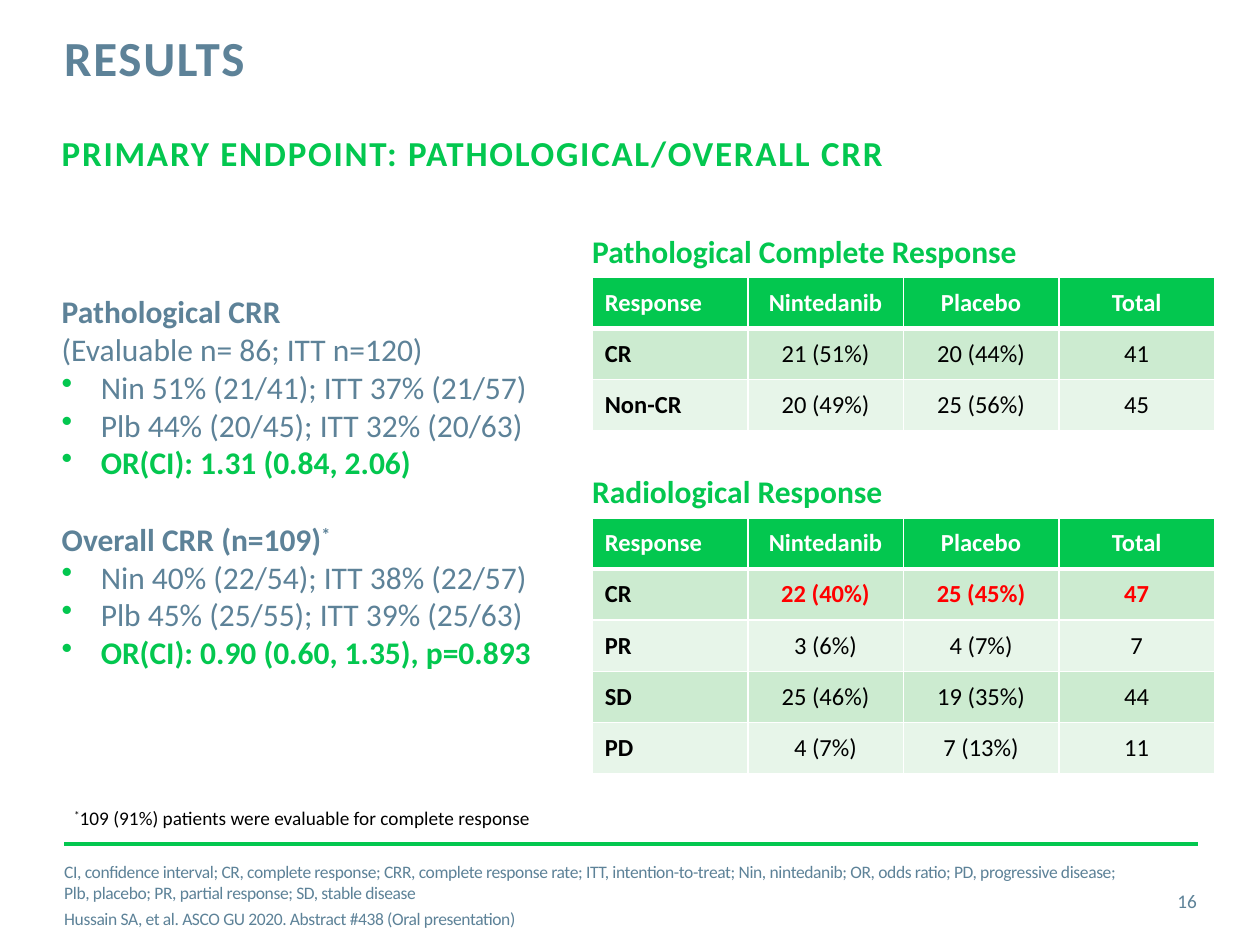
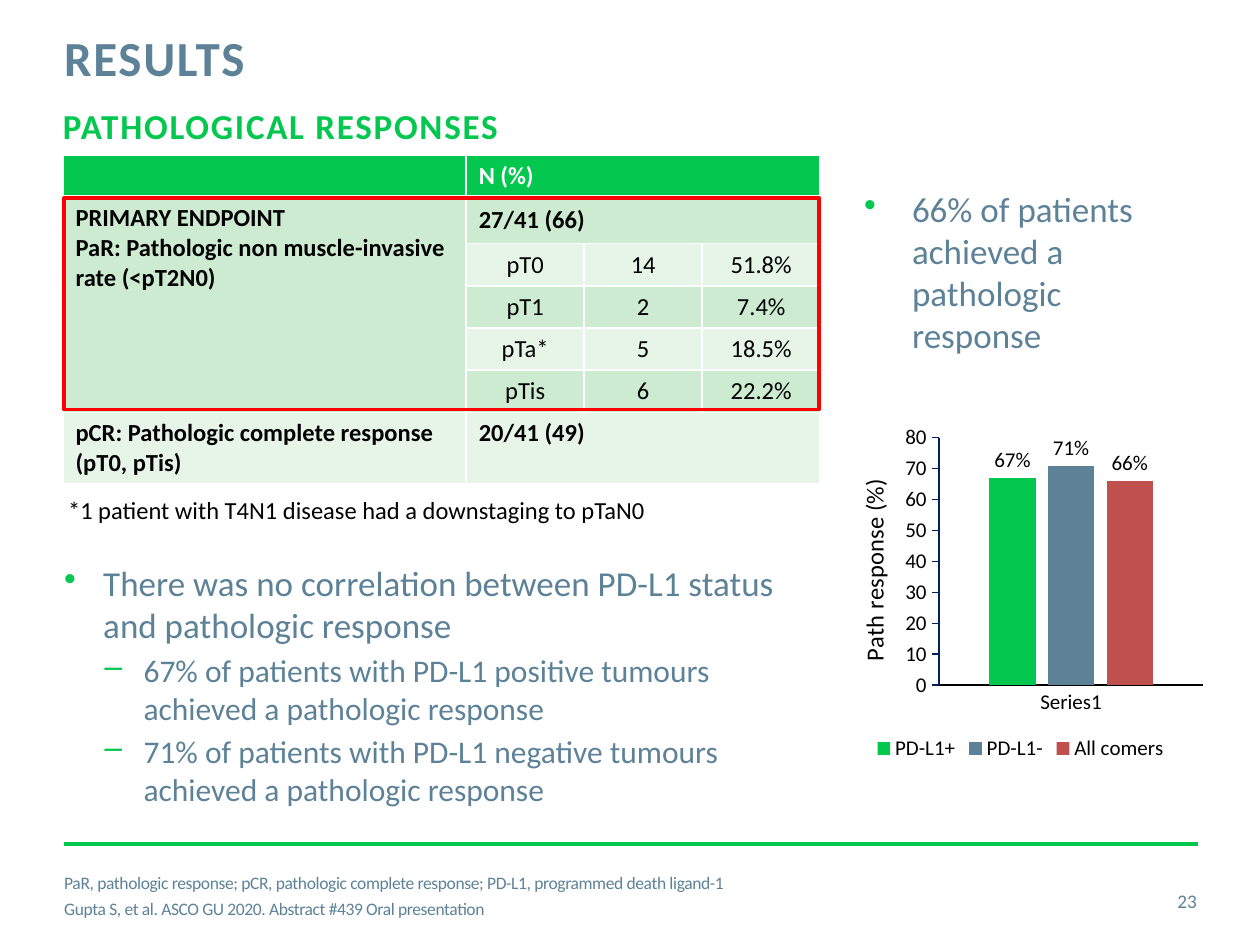
from dataclasses import dataclass
from typing import NamedTuple

from lxml.etree import SubElement
from pptx import Presentation
from pptx.chart.data import CategoryChartData
from pptx.dml.color import RGBColor
from pptx.enum.chart import XL_CHART_TYPE as ChartType
from pptx.enum.chart import XL_LABEL_POSITION as LabelPosition
from pptx.enum.chart import XL_LEGEND_POSITION as LegendPosition
from pptx.enum.chart import XL_TICK_MARK as TickMark
from pptx.enum.shapes import MSO_CONNECTOR as Connector
from pptx.enum.shapes import MSO_SHAPE as Shape
from pptx.enum.text import MSO_ANCHOR as Anchor
from pptx.enum.text import PP_ALIGN as Align
from pptx.oxml.ns import qn
from pptx.util import Inches, Pt


@dataclass(frozen=True)
class Theme:
    """Colours and type sizes of the deck."""
    font: str = "Calibri"
    green: str = "03C74F"
    slate: str = "5D8298"
    brick: str = "C0504D"
    navy: str = "002060"
    red: str = "FF0000"
    black: str = "000000"
    white: str = "FFFFFF"
    band_dark: str = "CCEBD0"
    band_light: str = "E7F5E9"
    title: int = 28
    heading: int = 20
    body: int = 18
    table: int = 14
    chart: int = 12
    small: int = 11
    footer: int = 10


THEME = Theme()


class Box(NamedTuple):
    """A region in inches."""
    left: float
    top: float
    width: float
    height: float

    def emu(self):
        """Return the region as lengths."""
        return [Inches(value) for value in self]


@dataclass(frozen=True)
class Span:
    """A stretch of text in one style."""
    text: str
    size: float = THEME.body
    color: str = THEME.slate
    bold: bool = False
    spacing: float = 0
    raised: bool = False


@dataclass(frozen=True)
class Line:
    """A paragraph with its spans and layout."""
    spans: tuple
    bullet: str = ""
    left: float = 0.31
    hang: float = 0.31
    before: float = 0
    align: Align = Align.LEFT
    exact: float = 0


def style_font(font, size, color, bold=False):
    """Set family, size, colour and weight."""
    font.name, font.size, font.bold = THEME.font, Pt(size), bold
    font.color.rgb = RGBColor.from_string(color)


def add_span(para, span):
    """Add a span run by run, with a break at each newline."""
    for index, text in enumerate(span.text.split("\n")):
        if index:
            para.add_line_break()
        run = para.add_run()
        run.text = text
        style_font(run.font, span.size, span.color, span.bold)
        props = run._r.get_or_add_rPr()
        if span.spacing:
            props.set("spc", str(round(span.spacing * 100)))
        if span.raised:
            props.set("baseline", "30000")


def add_bullet(para, line):
    """Give the paragraph a hanging green bullet."""
    props = para._p.get_or_add_pPr()
    props.set("marL", str(Inches(line.left)))
    props.set("indent", str(-Inches(line.hang)))
    color = SubElement(props, qn("a:buClr"))
    SubElement(color, qn("a:srgbClr"), val=THEME.green)
    SubElement(props, qn("a:buChar"), char=line.bullet)


def fill_frame(frame, lines):
    """Write the lines into a text frame."""
    for index, line in enumerate(lines):
        para = frame.add_paragraph() if index else frame.paragraphs[0]
        para.alignment = line.align
        if line.before:
            para.space_before = Pt(line.before)
        if line.exact:
            para.line_spacing = Pt(line.exact)
        if line.bullet:
            add_bullet(para, line)
        for span in line.spans:
            add_span(para, span)


def add_text(page, box, lines, anchor=Anchor.TOP, insets=(0, 0, 0, 0)):
    """Place a wrapped text box."""
    frame = page.shapes.add_textbox(*box.emu()).text_frame
    frame.word_wrap = True
    frame.vertical_anchor = anchor
    (frame.margin_left, frame.margin_top,
     frame.margin_right, frame.margin_bottom) = [Inches(inset) for inset in insets]
    fill_frame(frame, lines)


def add_frame(page, heading, heading_box, notes, number):
    """Place the title, heading, rule, footer notes and page number."""
    rule = page.shapes.add_connector(
        Connector.STRAIGHT, Inches(0.51), Inches(6.7), Inches(9.51), Inches(6.7))
    rule.line.color.rgb = RGBColor.from_string(THEME.green)
    rule.line.width = Pt(2)
    SubElement(rule._element.spPr, qn("a:effectLst"))
    title = Span("RESULTS", THEME.title, bold=True, spacing=1)
    add_text(page, Box(0.51, 0.27, 7.17, 0.88), [Line((title,), exact=30)])
    span = Span(heading, THEME.heading, THEME.green, True, 1)
    add_text(page, heading_box, [Line((span,))])
    footer = [Line((Span(note, THEME.footer, spacing=-0.2),), before=3 if index else 0)
              for index, note in enumerate(notes)]
    add_text(page, Box(0.51, 6.8, 8.35, 0.61), footer, Anchor.MIDDLE)
    label = Span(str(number), THEME.small)
    add_text(page, Box(8.86, 6.95, 0.64, 0.4),
             [Line((label,), align=Align.RIGHT)], Anchor.MIDDLE)


def style_cell(cell, fill, top=1, bottom=1):
    """Set white borders, then the fill, of a table cell."""
    props = cell._tc.get_or_add_tcPr()
    for side, width in (("L", 1), ("R", 1), ("T", top), ("B", bottom)):
        edge = SubElement(props, qn(f"a:ln{side}"), w=str(Pt(width)))
        paint = SubElement(edge, qn("a:solidFill"))
        SubElement(paint, qn("a:srgbClr"), val=THEME.white)
    cell.fill.solid()
    cell.fill.fore_color.rgb = RGBColor.from_string(fill)
    cell.vertical_anchor = Anchor.MIDDLE
    end = cell.text_frame.paragraphs[0]._p.get_or_add_endParaRPr()
    end.set("sz", str(THEME.table * 100))


def add_grid(page, box, widths, heights):
    """Add a banded table with a green header and return it."""
    table = page.shapes.add_table(len(heights), len(widths), *box.emu()).table
    for column, width in zip(table.columns, widths):
        column.width = Inches(width)
    for index, (row, height) in enumerate(zip(table.rows, heights)):
        row.height = Inches(height)
        band = THEME.band_dark if index % 2 else THEME.band_light
        for cell in row.cells:
            style_cell(cell, band if index else THEME.green,
                       top=3 if index == 1 else 1, bottom=1 if index else 3)
    return table


def write_cell(cell, text, color=THEME.black, bold=False, align=Align.LEFT):
    """Write one styled line in a table cell."""
    fill_frame(cell.text_frame,
               [Line((Span(text, THEME.table, color, bold),), align=align)])


def add_response_table(page, box, caption, rows, red_row=None):
    """Place a caption and its table of responses by arm."""
    span = Span(caption, THEME.body, THEME.green, True)
    add_text(page, Box(box.left, box.top - 0.41, 4.64, 0.4),
             [Line((span,))], insets=(0, 0.05, 0.1, 0.05))
    rows = [("Response", "Nintedanib", "Placebo", "Total"), *rows]
    table = add_grid(page, box, [box.width / 4] * 4, [box.height / len(rows)] * len(rows))
    for i, row in enumerate(rows):
        for j, text in enumerate(row):
            red = i == red_row and j > 0
            color = THEME.red if red else THEME.black if i else THEME.white
            write_cell(table.cell(i, j), text, color, i == 0 or j == 0 or red,
                       Align.CENTER if j else Align.LEFT)


def add_pathology_table(page, box):
    """Place the table of pathological responses with its red outline."""
    heights = [0.32, 0.37, *[0.335] * 4, 0.57]
    table = add_grid(page, box, [3.2] + [(box.width - 3.2) / 3] * 3, heights)
    for row in (0, 1, 6):
        table.cell(row, 1).merge(table.cell(row, 3))
    table.cell(1, 0).merge(table.cell(5, 0))
    write_cell(table.cell(0, 1), "N (%)", THEME.white, True)
    bold_cells = {
        (1, 0): "PRIMARY ENDPOINT\nPaR: Pathologic non muscle-invasive rate (<pT2N0)",
        (1, 1): "27/41 (66)",
        (6, 0): "pCR: Pathologic complete response (pT0, pTis)",
        (6, 1): "20/41 (49)",
    }
    for place, text in bold_cells.items():
        write_cell(table.cell(*place), text, bold=True)
    for place in ((1, 0), (6, 1)):
        table.cell(*place).vertical_anchor = Anchor.TOP
    stages = [("pT0", "14", "51.8%"), ("pT1", "2", "7.4%"),
              ("pTa*", "5", "18.5%"), ("pTis", "6", "22.2%")]
    for i, stage in enumerate(stages, 2):
        for j, text in enumerate(stage, 1):
            write_cell(table.cell(i, j), text, align=Align.CENTER)
    outline_box = Box(box.left + 0.01, box.top + 0.34, box.width - 0.02, 1.68)
    outline = page.shapes.add_shape(Shape.RECTANGLE, *outline_box.emu())
    outline.shadow.inherit = False
    outline.fill.background()
    outline.line.color.rgb = RGBColor.from_string(THEME.red)
    outline.line.width = Pt(2)


def style_axis(axis, color, tick):
    """Set the line, ticks and labels of a chart axis."""
    axis.has_major_gridlines = False
    axis.major_tick_mark, axis.minor_tick_mark = tick, TickMark.NONE
    axis.format.line.color.rgb = RGBColor.from_string(color)
    axis.format.line.width = Pt(0.75)
    style_font(axis.tick_labels.font, THEME.chart, THEME.black)


def add_response_chart(page, box):
    """Place the column chart of response by PD-L1 status."""
    data = CategoryChartData()
    data.categories = ["Series1"]
    for name, value in (("PD-L1+", 67), ("PD-L1-", 71), ("All comers", 66)):
        data.add_series(name, [value])
    chart = page.shapes.add_chart(ChartType.COLUMN_CLUSTERED, *box.emu(), data).chart
    style_font(chart.font, THEME.footer, THEME.black)
    chart.has_title = False
    chart.has_legend = True
    chart.legend.position = LegendPosition.BOTTOM
    chart.legend.include_in_layout = False
    style_font(chart.legend.font, THEME.chart, THEME.black)
    style_axis(chart.category_axis, THEME.black, TickMark.NONE)
    scale = chart.value_axis
    style_axis(scale, THEME.navy, TickMark.OUTSIDE)
    scale.minimum_scale, scale.maximum_scale, scale.major_unit = 0, 80, 10
    title = Span("Path response (%)", THEME.table, THEME.black)
    fill_frame(scale.axis_title.text_frame, [Line((title,))])
    plot = chart.plots[0]
    plot.gap_width, plot.overlap, plot.vary_by_categories = 219, -27, False
    for series, color in zip(plot.series, (THEME.green, THEME.slate, THEME.brick)):
        series.format.fill.solid()
        series.format.fill.fore_color.rgb = RGBColor.from_string(color)
        labels = series.data_labels
        labels.show_value = True
        labels.position = LabelPosition.OUTSIDE_END
        labels.number_format, labels.number_format_is_linked = '0"%"', False
        style_font(labels.font, THEME.chart, THEME.black)


def bullets(*texts):
    """Return bulleted lines, the last one in bold green."""
    plain = [Line((Span(text),), "•") for text in texts[:-1]]
    return [*plain, Line((Span(texts[-1], color=THEME.green, bold=True),), "•")]


def build_endpoint(page):
    """Build the slide on the primary endpoint."""
    add_frame(page, "PRIMARY ENDPOINT: PATHOLOGICAL/OVERALL CRR", Box(0.49, 1.04, 9, 0.49), [
        "CI, confidence interval; CR, complete response; CRR, complete response rate; "
        "ITT, intention-to-treat; Nin, nintedanib; OR, odds ratio; PD, progressive disease; "
        "Plb, placebo; PR, partial response; SD, stable disease",
        "Hussain SA, et al. ASCO GU 2020. Abstract #438 (Oral presentation)"], 16)
    add_text(page, Box(0.49, 2.32, 4.06, 3.46), [
        Line((Span("Pathological CRR", bold=True),)),
        Line((Span("(Evaluable n= 86; ITT n=120)"),)),
        *bullets("Nin 51% (21/41); ITT 37% (21/57)", "Plb 44% (20/45); ITT 32% (20/63)",
                 "OR(CI): 1.31 (0.84, 2.06)"),
        Line((Span("Overall CRR (n=109)", bold=True), Span("*", bold=True, raised=True)),
             before=22),
        *bullets("Nin 40% (22/54); ITT 38% (22/57)", "Plb 45% (25/55); ITT 39% (25/63)",
                 "OR(CI): 0.90 (0.60, 1.35), p=0.893")])
    add_text(page, Box(0.49, 6.35, 8.82, 0.29), [Line((
        Span("*", THEME.small, THEME.black, raised=True),
        Span("109 (91%) patients were evaluable for complete response",
             THEME.small, THEME.black)))], insets=(0.1, 0.05, 0.1, 0.05))
    add_response_table(page, Box(4.7, 2.2, 4.94, 1.22), "Pathological Complete Response", [
        ("CR", "21 (51%)", "20 (44%)", "41"), ("Non-CR", "20 (49%)", "25 (56%)", "45")])
    add_response_table(page, Box(4.7, 4.11, 4.94, 2.03), "Radiological Response", [
        ("CR", "22 (40%)", "25 (45%)", "47"), ("PR", "3 (6%)", "4 (7%)", "7"),
        ("SD", "25 (46%)", "19 (35%)", "44"), ("PD", "4 (7%)", "7 (13%)", "11")], red_row=1)


def build_pathology(page):
    """Build the slide on pathological responses."""
    add_frame(page, "PATHOLOGICAL RESPONSES", Box(0.5, 0.83, 9, 0.77), [
        "PaR, pathologic response; pCR, pathologic complete response; "
        "PD-L1, programmed death ligand-1",
        "Gupta S, et al. ASCO GU 2020. Abstract #439 Oral presentation"], 23)
    finding = Span("There was no correlation between PD-L1 status and pathologic response",
                   THEME.heading)
    groups = [Line((Span(f"{share} of patients with PD-L1 {status} tumours "
                         "achieved a pathologic response"),), "–", left=0.63, before=3)
              for share, status in (("67%", "positive"), ("71%", "negative"))]
    add_text(page, Box(0.51, 4.46, 6.04, 2.1), [Line((finding,), "•"), *groups])
    summary = Span("66% of patients achieved a pathologic response", THEME.heading)
    add_text(page, Box(6.76, 1.44, 2.78, 1.45),
             [Line((summary,), "•", left=0.38, hang=0.38)], insets=(0.1, 0.05, 0.1, 0.05))
    add_response_chart(page, Box(6.59, 3.32, 3.02, 2.76))
    add_pathology_table(page, Box(0.5, 1.23, 6.01, 2.6))
    note = Span("*1 patient with T4N1 disease had a downstaging to pTaN0",
                THEME.table, THEME.black)
    add_text(page, Box(0.54, 3.93, 6.01, 0.4), [Line((note,))])


def main():
    """Build and save the deck."""
    deck = Presentation()
    deck.slide_width, deck.slide_height = Inches(10), Inches(7.5)
    for build in (build_endpoint, build_pathology):
        build(deck.slides.add_slide(deck.slide_layouts[6]))
    deck.save("out.pptx")


if __name__ == "__main__":
    main()
